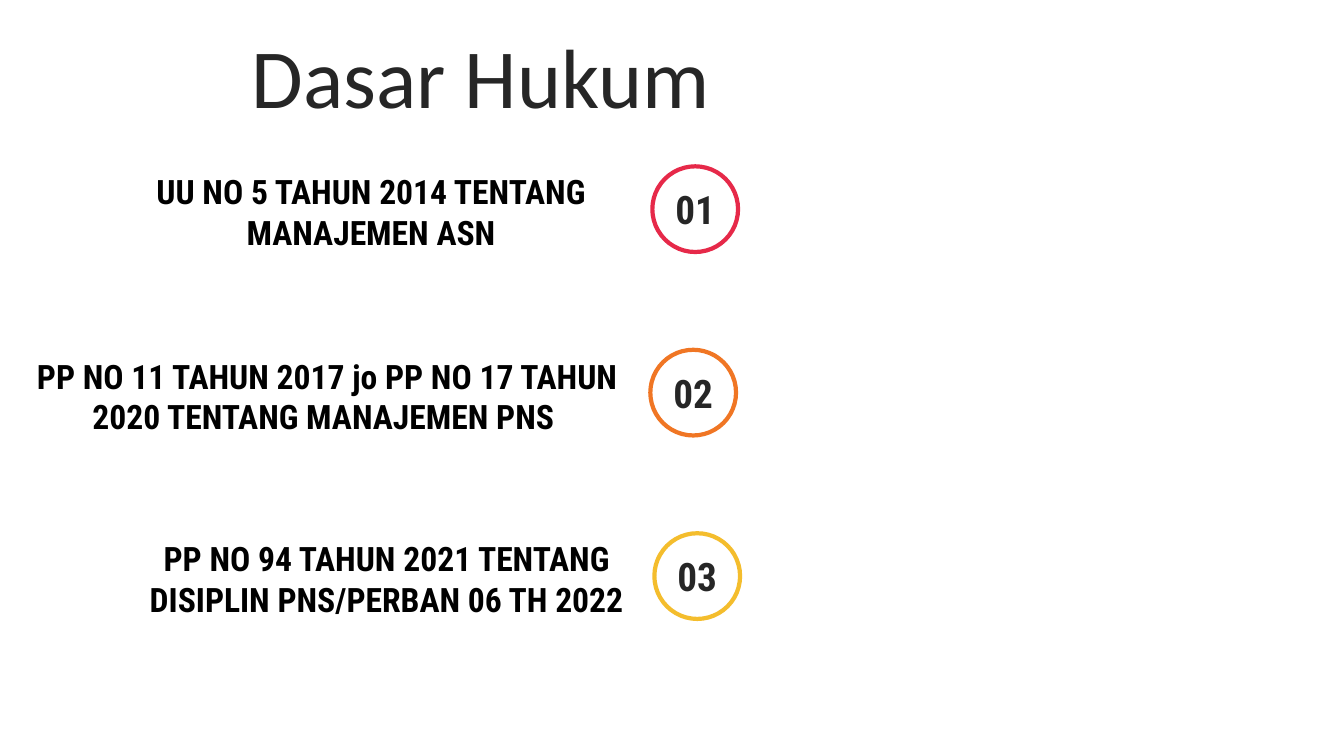
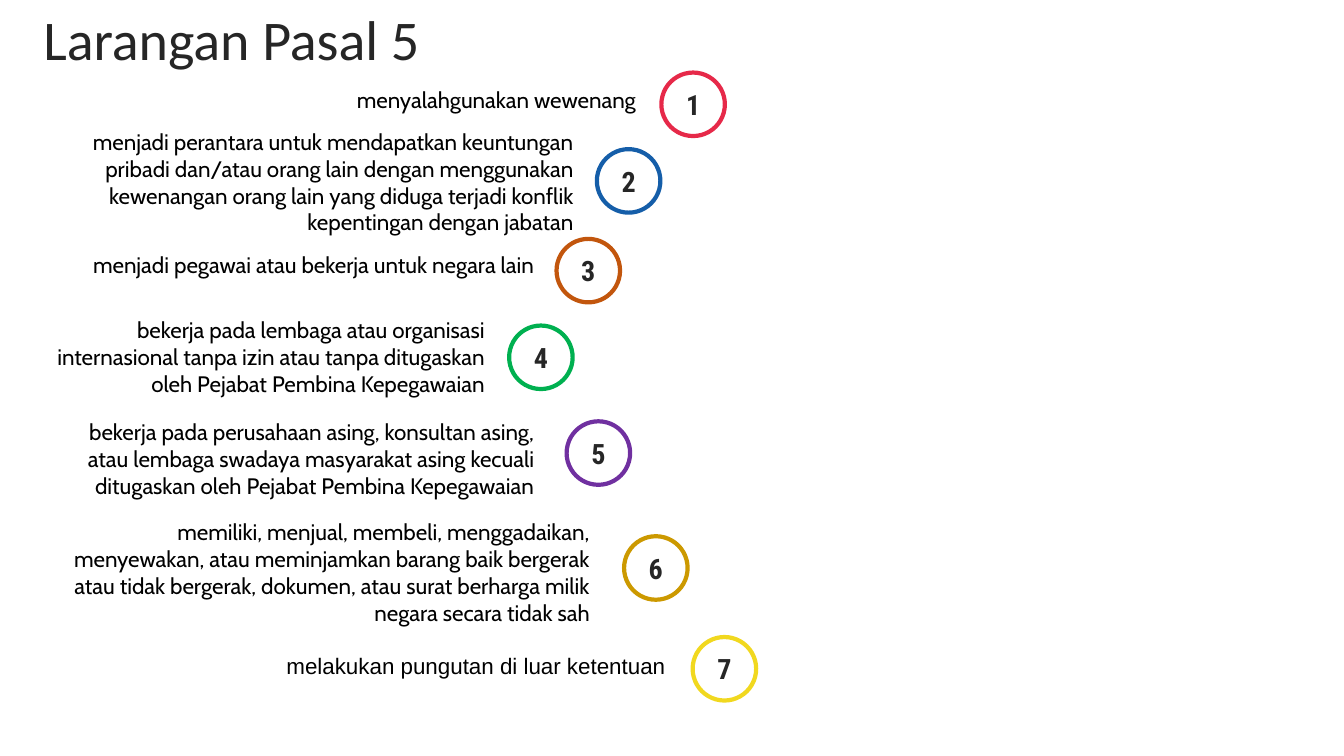
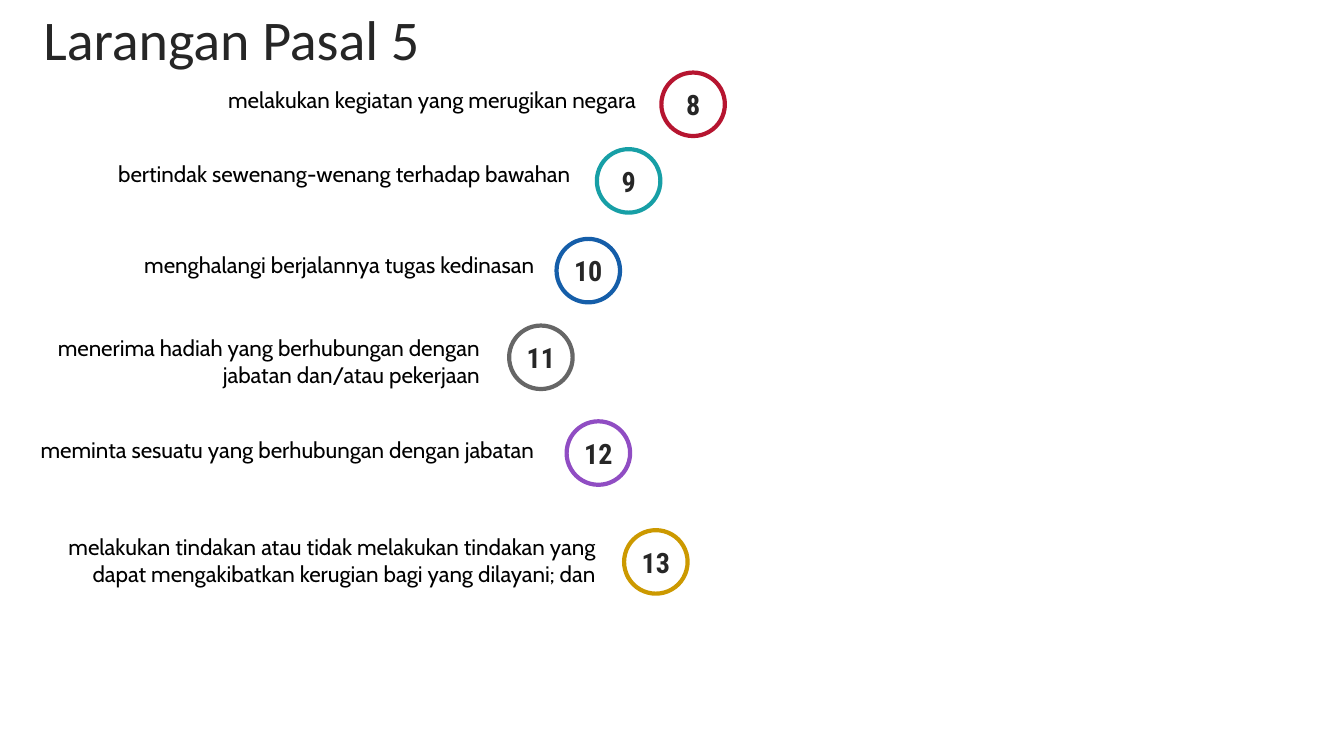
from dataclasses import dataclass

from pptx import Presentation
from pptx.dml.color import RGBColor
from pptx.enum.shapes import MSO_SHAPE as Shape
from pptx.enum.text import MSO_ANCHOR as Anchor, MSO_AUTO_SIZE as AutoSize, PP_ALIGN as Align
from pptx.util import Inches, Pt


@dataclass(frozen=True)
class Theme:
    ink: str = "262626"
    black: str = "000000"
    title_font: str = "Calibri"
    number_font: str = "Roboto Condensed"
    body_font: str = "Cabin"
    fallback_font: str = "Arial"
    ring_line: float = 3
    inset_x: float = 0.12
    inset_y: float = 0.05


THEME = Theme()

LAW_STYLE = {
    "title_box": (0, 0.19, 7.14, 1.11), "title_size": 60,
    "ring": 0.85, "number_size": 28, "row": 0.4,
    "align": Align.CENTER,
    "label": {"name": THEME.number_font, "size": 24, "bold": True},
}
BAN_STYLE = {
    "title_box": (0.06, -0.01, 4.2, 0.77), "title_size": 40,
    "ring": 0.63, "number_size": 20, "row": 0.27,
    "align": Align.RIGHT,
    "label": {"name": THEME.body_font, "size": 16, "bold": False},
}

# Left and top of each numbered ring
LAW_RINGS = [(6.47, 1.65), (6.45, 3.47), (6.49, 5.29)]
BAN_RINGS = [(6.56, 0.72), (5.92, 1.48), (5.52, 2.37), (5.05, 3.23),
             (5.62, 4.18), (6.19, 5.32), (6.87, 6.32)]

# Items: number, ring colour, text, (left, top, width, rows), optional font
SLIDES = [
    ("Dasar Hukum", LAW_STYLE, LAW_RINGS, [
        ("01", "E62949", "UU NO 5 TAHUN 2014 TENTANG MANAJEMEN ASN", (0.98, 1.65, 5.4, 2)),
        ("02", "F07624", "PP NO 11 TAHUN 2017 jo PP NO 17 TAHUN 2020 TENTANG MANAJEMEN PNS ",
         (0.14, 3.48, 6.21, 2)),
        ("03", "F4BD2D", "PP NO 94 TAHUN 2021 TENTANG\nDISIPLIN PNS/PERBAN 06 TH 2022",
         (1.12, 5.29, 5.43, 3)),
    ]),
    ("Larangan Pasal 5", BAN_STYLE, BAN_RINGS, [
        ("1", "E62949", "menyalahgunakan wewenang", (2.57, 0.81, 3.86, 1)),
        ("2", "155EA9", "menjadi perantara untuk mendapatkan keuntungan pribadi dan/atau "
         "orang lain dengan menggunakan kewenangan orang lain yang diduga terjadi konflik "
         "kepentingan dengan jabatan", (0.35, 1.22, 5.46, 4)),
        ("3", "C2560D", "menjadi pegawai atau bekerja untuk negara lain",
         (0.04, 2.44, 5.38, 1)),
        ("4", "00B050", "bekerja pada lembaga atau organisasi internasional tanpa izin atau "
         "tanpa ditugaskan oleh Pejabat Pembina Kepegawaian", (0.32, 3.09, 4.61, 3)),
        ("5", "7030A0", "bekerja pada perusahaan asing, konsultan asing, atau lembaga swadaya "
         "masyarakat asing kecuali ditugaskan oleh Pejabat Pembina Kepegawaian",
         (0.53, 4.1, 4.89, 3)),
        ("6", "CC9900", "memiliki, menjual, membeli, menggadaikan, menyewakan, atau "
         "meminjamkan barang baik bergerak atau tidak bergerak, dokumen, atau surat berharga "
         "milik negara secara tidak sah", (0.59, 5.09, 5.38, 4)),
        ("7", "F1D81F", "melakukan pungutan di luar ketentuan", (2.11, 6.42, 4.61, 1),
         THEME.fallback_font),
    ]),
    ("Larangan Pasal 5", BAN_STYLE, BAN_RINGS[:5] + [(6.19, 5.26)], [
        ("8", "B61530", "melakukan kegiatan yang merugikan negara", (1.89, 0.81, 4.54, 1)),
        ("9", "179FA6", "bertindak sewenang-wenang terhadap bawahan", (0.32, 1.54, 5.46, 1)),
        ("10", "155EA9", "menghalangi berjalannya tugas kedinasan", (0.04, 2.44, 5.38, 1)),
        ("11", "666666", "menerima hadiah yang berhubungan dengan jabatan dan/atau pekerjaan",
         (0.27, 3.27, 4.61, 2)),
        ("12", "904DC3", "meminta sesuatu yang berhubungan dengan jabatan",
         (0.11, 4.28, 5.31, 1)),
        ("13", "CC9900", "melakukan tindakan atau tidak melakukan tindakan yang dapat "
         "mengakibatkan kerugian bagi yang dilayani; dan", (0.43, 5.24, 5.6, 2)),
    ]),
]


def write(shape, text, font, align, anchor, inset=(0, 0), wrap=True):
    frame = shape.text_frame
    frame.text = text
    inset_x, inset_y = map(Inches, inset)
    frame_format = {"word_wrap": wrap, "auto_size": AutoSize.NONE, "vertical_anchor": anchor,
                    "margin_left": inset_x, "margin_right": inset_x,
                    "margin_top": inset_y, "margin_bottom": inset_y}
    for name, value in frame_format.items():
        setattr(frame, name, value)
    for paragraph in frame.paragraphs:
        paragraph.alignment = align
        for name in ("name", "bold"):
            setattr(paragraph.font, name, font[name])
        paragraph.font.size = Pt(font["size"])
        paragraph.font.color.rgb = RGBColor.from_string(font["color"])


def add_title(slide, text, style):
    title = slide.shapes.title
    for name, value in zip(("left", "top", "width", "height"), style["title_box"]):
        setattr(title, name, Inches(value))
    font = {"name": THEME.title_font, "size": style["title_size"], "bold": False,
            "color": THEME.ink}
    write(title, text, font, Align.RIGHT, Anchor.MIDDLE, (0.1, 0.05))


def add_ring(slide, number, color, place, style):
    left, top = map(Inches, place)
    diameter = Inches(style["ring"])
    ring = slide.shapes.add_shape(Shape.OVAL, left, top, diameter, diameter)
    ring.shadow.inherit = False
    ring.fill.background()
    ring.line.color.rgb = RGBColor.from_string(color)
    ring.line.width = Pt(THEME.ring_line)
    font = {"name": THEME.number_font, "size": style["number_size"], "bold": True,
            "color": THEME.ink}
    write(ring, number, font, Align.CENTER, Anchor.MIDDLE, wrap=False)


def add_label(slide, text, box, style, font_name=None):
    left, top, width, rows = box
    height = rows * style["row"] + 2 * THEME.inset_y
    label = slide.shapes.add_textbox(*map(Inches, (left, top, width, height)))
    font = {**style["label"], "color": THEME.black}
    if font_name:
        font["name"] = font_name
    write(label, text, font, style["align"], Anchor.TOP, (THEME.inset_x, THEME.inset_y))


def main():
    presentation = Presentation()
    presentation.slide_width, presentation.slide_height = Inches(13.33), Inches(7.5)
    title_only = presentation.slide_layouts[5]
    for title, style, rings, items in SLIDES:
        slide = presentation.slides.add_slide(title_only)
        add_title(slide, title, style)
        for place, (number, color, text, box, *font_name) in zip(rings, items):
            add_ring(slide, number, color, place, style)
            add_label(slide, text, box, style, *font_name)
    presentation.save("out.pptx")


if __name__ == "__main__":
    main()
